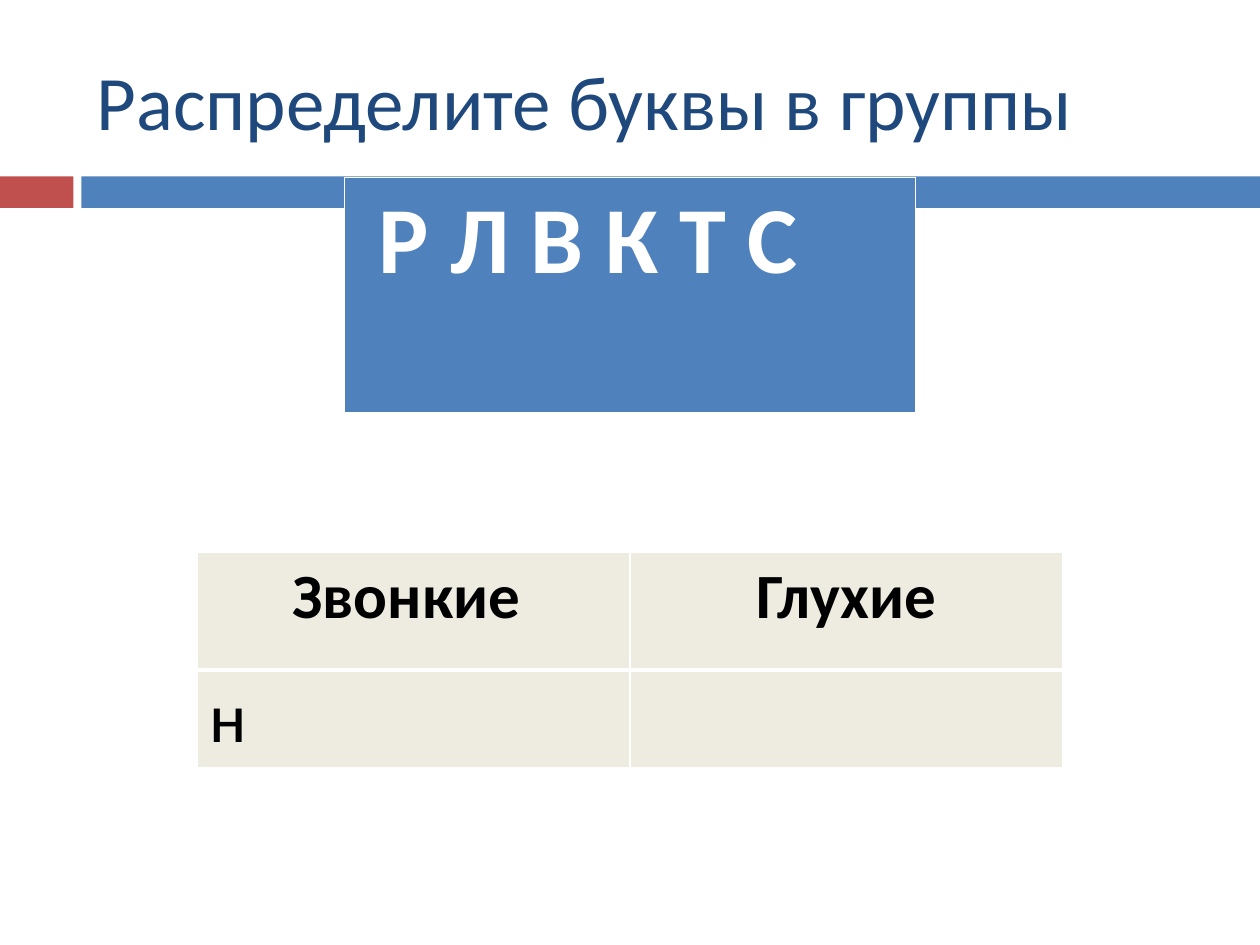
from lxml import etree
from pptx import Presentation
from pptx.dml.color import RGBColor
from pptx.enum.shapes import MSO_SHAPE
from pptx.enum.text import MSO_ANCHOR, MSO_AUTO_SIZE, PP_ALIGN
from pptx.oxml.ns import qn
from pptx.util import Pt

RECTANGLE = MSO_SHAPE.RECTANGLE
MIDDLE = MSO_ANCHOR.MIDDLE
NO_AUTOFIT = MSO_AUTO_SIZE.NONE
LEFT, CENTER = PP_ALIGN.LEFT, PP_ALIGN.CENTER

WHITE = RGBColor(0xFF, 0xFF, 0xFF)
BLACK = RGBColor(0x00, 0x00, 0x00)
NAVY = RGBColor(0x1F, 0x49, 0x7D)
BLUE = RGBColor(0x4F, 0x81, 0xBD)
RED = RGBColor(0xC0, 0x50, 0x4D)
CREAM = RGBColor(0xEE, 0xEC, 0xE1)


class SlideBuilder:
    font = "Calibri"
    thin, thick = 1, 3

    def __init__(self, slide):
        self.slide = slide

    def styled_text(self, frame, text, size, color, bold=False, align=LEFT):
        frame.text = text
        paragraph = frame.paragraphs[0]
        paragraph.alignment = align
        for run in paragraph.runs:
            run.font.name = self.font
            run.font.size = Pt(size)
            run.font.bold = bold
            run.font.color.rgb = color

    def title(self, text, left, top, width, height):
        heading = self.slide.shapes.title
        heading.left, heading.top = Pt(left), Pt(top)
        heading.width, heading.height = Pt(width), Pt(height)
        frame = heading.text_frame
        frame.auto_size = NO_AUTOFIT
        frame.vertical_anchor = MIDDLE
        self.styled_text(frame, text, 44, NAVY)

    def bar(self, left, top, width, height, color):
        bar = self.slide.shapes.add_shape(
            RECTANGLE, Pt(left), Pt(top), Pt(width), Pt(height))
        bar.shadow.inherit = False
        bar.fill.solid()
        bar.fill.fore_color.rgb = color
        bar.line.fill.background()

    def borders(self, cell, top, bottom):
        properties = cell._tc.get_or_add_tcPr()
        widths = {"a:lnL": self.thin, "a:lnR": self.thin,
                  "a:lnT": top, "a:lnB": bottom}
        for side, width in widths.items():
            line = etree.SubElement(properties, qn(side), w=str(Pt(width)))
            fill = etree.SubElement(line, qn("a:solidFill"))
            etree.SubElement(fill, qn("a:srgbClr"), val=str(WHITE))

    def table(self, left, top, column_width, row_heights, rows, fill, styles):
        """Each row has its own (size, color, bold, align) style."""
        columns = len(rows[0])
        grid = self.slide.shapes.add_table(
            len(rows), columns, Pt(left), Pt(top),
            Pt(column_width * columns), Pt(sum(row_heights))).table
        for column in grid.columns:
            column.width = Pt(column_width)
        for r, texts in enumerate(rows):
            grid.rows[r].height = Pt(row_heights[r])
            # The header row is set off by a thick line below it
            above = self.thick if r == 1 else self.thin
            below = self.thick if r == 0 else self.thin
            for c, text in enumerate(texts):
                cell = grid.cell(r, c)
                self.borders(cell, above, below)
                cell.fill.solid()
                cell.fill.fore_color.rgb = fill
                if text:
                    self.styled_text(cell.text_frame, text, *styles[r])


def main():
    deck = Presentation()
    deck.slide_width, deck.slide_height = Pt(720), Pt(540)
    builder = SlideBuilder(deck.slides.add_slide(deck.slide_layouts[5]))

    # Band under the title
    builder.bar(0, 100.8, 42, 18, RED)
    builder.bar(46.5, 100.8, 673.5, 18, BLUE)

    builder.title("Распределите буквы в группы", 48, 18, 642, 78)

    # Letters to sort
    builder.table(196.9, 101.5, 326.2, [135.4], [[" Р Л В К Т С"]], BLUE,
                  [(54, WHITE, True, LEFT)])

    # Groups of consonants
    builder.table(112.5, 315.4, 247.5, [67.5, 55.5],
                  [["Звонкие ", "Глухие"], ["н", ""]], CREAM,
                  [(36, BLACK, True, CENTER), (40, BLACK, False, LEFT)])

    deck.save("out.pptx")


if __name__ == "__main__":
    main()
